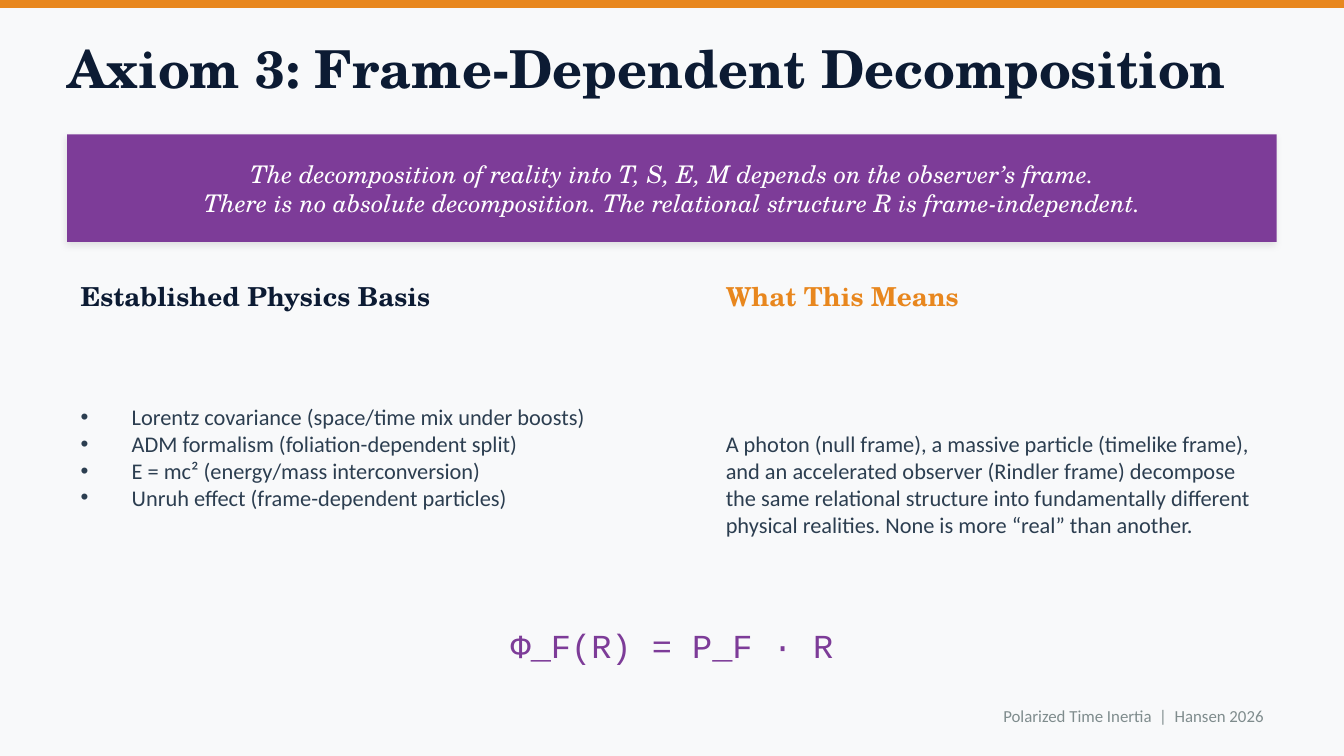
import lxml.etree
import pptx
import pptx.dml.color
import pptx.enum.shapes
import pptx.enum.text
import pptx.oxml.ns
import pptx.util
from pptx.util import Inches

ALIGN = pptx.enum.text.PP_ALIGN
SERIF, SANS, MONO = "TeX Gyre Schola", "Calibri", "Courier New"
NAVY, ORANGE, PURPLE, SLATE = "0C1B33", "E8871E", "7D3C98", "2C3E50"
PALE, WHITE, GRAY = "F8F9FA", "FFFFFF", "7F8C8D"

TITLE = "Axiom 3: Frame-Dependent Decomposition"
AXIOM = [
    "The decomposition of reality into T, S, E, M depends on the observer’s frame.",
    "There is no absolute decomposition. The relational structure R is frame-independent.",
]
COLUMNS = [
    {
        "heading": "Established Physics Basis",
        "color": NAVY,
        "body": [
            "Lorentz covariance (space/time mix under boosts)",
            "ADM formalism (foliation-dependent split)",
            "E = mc² (energy/mass interconversion)",
            "Unruh effect (frame-dependent particles)",
        ],
        "bullet": "•",
        "height": 2,
    },
    {
        "heading": "What This Means",
        "color": ORANGE,
        "body": [
            "A photon (null frame), a massive particle (timelike frame), and an "
            "accelerated observer (Rindler frame) decompose the same relational "
            "structure into fundamentally different physical realities. None is "
            "more “real” than another."
        ],
        "bullet": None,
        "height": 2.4,
    },
]
FORMULA = "Φ_F(R) = P_F · R"
FOOTER = "Polarized Time Inertia  |  Hansen 2026"

MARGIN, WIDTH = 0.5, 9
COL_W, COL_STEP = 4.2, 4.8
INDENT = 0.38


def rgb(color):
    return pptx.dml.color.RGBColor.from_string(color)


def add_xml(parent, tag, **attributes):
    element = lxml.etree.SubElement(parent, pptx.oxml.ns.qn(tag))
    for key, value in attributes.items():
        element.set(key, str(value))
    return element


def set_bullet(p, char):
    pPr = p._p.get_or_add_pPr()
    indent = Inches(INDENT) if char else 0
    pPr.set("marL", str(indent))
    pPr.set("indent", str(-indent))
    if char:
        add_xml(pPr, "a:buChar", char=char)
    else:
        add_xml(pPr, "a:buNone")


def write(sp, box, lines, color, size, name, align=ALIGN.LEFT, bullet=None, inset=None,
          bold=False, italic=False):
    """Place a text shape and fill it with one formatted paragraph per line."""
    sp.left, sp.top, sp.width, sp.height = map(Inches, box)
    tf = sp.text_frame
    frame = {"word_wrap": True, "auto_size": pptx.enum.text.MSO_AUTO_SIZE.NONE,
             "vertical_anchor": pptx.enum.text.MSO_ANCHOR.MIDDLE}
    if inset is not None:
        frame |= {f"margin_{side}": Inches(inset) for side in ("left", "top", "right", "bottom")}
    for key, value in frame.items():
        setattr(tf, key, value)
    font = {"name": name, "size": pptx.util.Pt(size), "bold": bold, "italic": italic}
    for i, line in enumerate(lines):
        p = tf.paragraphs[0] if i == 0 else tf.add_paragraph()
        set_bullet(p, bullet)
        p.alignment = align
        p.space_before = pptx.util.Pt(0)
        r = p.add_run()
        r.text = line
        for key, value in font.items():
            setattr(r.font, key, value)
        r.font.color.rgb = rgb(color)


def add_bar(s, box, color):
    sp = s.shapes.add_shape(pptx.enum.shapes.MSO_SHAPE.RECTANGLE, *map(Inches, box))
    sp.shadow.inherit = False
    sp.fill.solid()
    sp.fill.fore_color.rgb = rgb(color)
    sp.line.fill.background()
    return sp


def add_shadow(sp):
    effects = sp._element.spPr.find(pptx.oxml.ns.qn("a:effectLst"))
    shadow = add_xml(effects, "a:outerShdw", blurRad=pptx.util.Pt(4), dist=pptx.util.Pt(2),
                     dir=135 * 60000, algn="bl", rotWithShape=0)
    add_xml(add_xml(shadow, "a:srgbClr", val="000000"), "a:alpha", val=10000)


def add_text(s, box, *args, **kwargs):
    write(s.shapes.add_textbox(0, 0, 0, 0), box, *args, **kwargs)


def main():
    prs = pptx.Presentation()
    prs.slide_width = Inches(10)
    prs.slide_height = prs.slide_width * 9 // 16
    s = prs.slides.add_slide(prs.slide_layouts.get_by_name("Comparison"))
    s.background.fill.solid()
    s.background.fill.fore_color.rgb = rgb(PALE)

    add_bar(s, (0, 0, 10, 0.06), ORANGE)
    write(s.shapes.title, (MARGIN, 0.2, WIDTH, 0.6), [TITLE], NAVY, 28, SERIF,
          inset=0, bold=True)

    add_shadow(add_bar(s, (MARGIN, 1, WIDTH, 0.8), PURPLE))
    add_text(s, (0.7, 1, 8.6, 0.8), AXIOM, WHITE, 13, SERIF, ALIGN.CENTER, italic=True)

    for i, col in enumerate(COLUMNS):
        x = MARGIN + i * COL_STEP
        heading, body = list(s.placeholders)[1 + 2 * i:3 + 2 * i]
        write(heading, (x, 2, COL_W, 0.4), [col["heading"]], col["color"], 14, SERIF, bold=True)
        write(body, (x, 2.4, COL_W, col["height"]), col["body"], SLATE, 12, SANS,
              bullet=col["bullet"])

    add_text(s, (2.5, 4.6, 5, 0.4), [FORMULA], PURPLE, 18, MONO, ALIGN.CENTER)
    add_text(s, (MARGIN, 5.15, WIDTH, 0.35), [FOOTER], GRAY, 9, SANS, ALIGN.RIGHT)
    prs.save("out.pptx")


if __name__ == "__main__":
    main()
